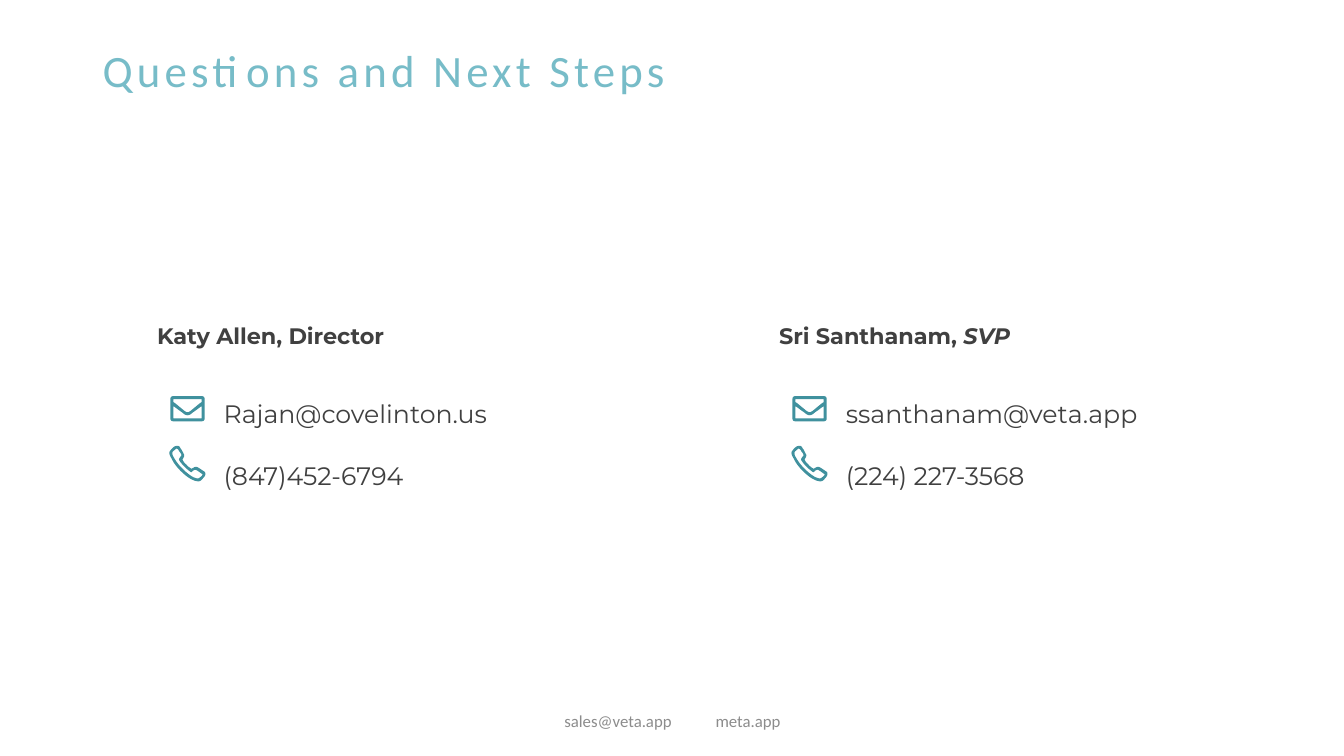
from dataclasses import dataclass

from pptx import Presentation
from pptx.dml.color import RGBColor as RGB
from pptx.enum.text import MSO_ANCHOR as Anchor, PP_ALIGN as Align
from pptx.util import Inches, Pt


@dataclass(frozen=True)
class Theme:
    heading: RGB = RGB(0x77, 0xBC, 0xC8)
    body: RGB = RGB(0x40, 0x40, 0x40)
    icon: RGB = RGB(0x40, 0x91, 0x9E)
    muted: RGB = RGB(0x8C, 0x8C, 0x8C)
    title_font: str = "Calibri"
    contact_font: str = "Montserrat"
    title_size: Pt = Pt(32)
    detail_size: Pt = Pt(18)
    name_size: Pt = Pt(16)
    footer_size: Pt = Pt(12)


THEME = Theme()

TITLE = {"name": THEME.title_font, "size": THEME.title_size}
NAME = {"name": THEME.contact_font, "size": THEME.name_size, "bold": True}
DETAIL = {"name": THEME.contact_font, "size": THEME.detail_size}
FOOTER = {"name": THEME.title_font, "size": THEME.footer_size}

# Contours hold hundredths of an inch: pairs are line ends, sixes are curves.
ENVELOPE = [
    [(31, 0), (3, 0), (1, 0, 0, 1, 0, 3), (0, 22), (0, 24, 1, 25, 3, 25),
     (31, 25), (33, 25, 34, 24, 34, 22), (34, 3), (34, 1, 33, 0, 31, 0)],
    [(31, 3), (31, 6), (29, 7, 27, 9, 22, 13), (21, 14, 18.5, 16, 17, 16),
     (15.5, 16, 13, 14, 12, 13), (7, 9, 5, 7, 3, 6), (3, 3)],
    [(3, 22), (3, 10), (5, 11, 7, 13, 10, 15), (12, 16, 14, 19, 17, 19),
     (20, 19, 22, 16, 24, 15), (27, 13, 29, 11, 31, 10), (31, 22)],
]
HANDSET = [
    [(35, 26), (34, 25.5, 29, 22, 28, 21.5), (27, 21, 25, 21, 24, 22),
     (23.5, 22, 22.5, 23, 22, 23), (20, 22, 18, 20.5, 17, 19),
     (15, 17.5, 14, 16, 13, 14), (13, 13.5, 14, 12.5, 14, 12),
     (15, 10.5, 15, 9, 14, 8), (14, 7.5, 13, 6, 12, 4),
     (11, 3, 10.5, 1.5, 10, 1), (9, 0, 7, 0, 5, 1),
     (4, 1.5, 2, 3.5, 1, 5), (0, 6, 0, 7, 0, 7.5),
     (0, 9, 1, 11, 2, 12.5), (3.5, 16, 6.5, 20.5, 11, 25),
     (15.5, 29.5, 19.5, 32.5, 23, 34), (25, 35, 27, 35.5, 29, 35.5),
     (31, 35.5, 32, 34, 33, 33), (33.5, 32, 34.5, 31.5, 35, 30.5),
     (36, 29, 36, 27, 35, 26)],
    [(29, 32.5), (27, 33, 26, 32, 24, 31.5), (21, 30, 17, 27, 13, 23),
     (9, 19, 6, 15, 4, 11), (3, 10, 3, 8, 3, 7), (3, 6, 5, 4.5, 7, 3),
     (8, 3, 9, 4, 10, 6), (11, 7, 12, 9, 12, 9.5),
     (12, 10, 11, 11, 10, 12.5), (9.5, 14), (10, 15, 11, 17, 15, 21),
     (19, 25, 21, 26, 21.5, 26.5), (22.5, 26), (23, 25, 25, 24, 26, 24),
     (27, 24, 32, 28, 33, 28.5), (33, 29.5, 31.5, 31, 29, 32.5)],
]


def add_text(slide, box, paragraphs, style, color, anchor=Anchor.TOP, **spacing):
    frame = slide.shapes.add_textbox(*map(Inches, box)).text_frame
    frame.word_wrap = True
    frame.vertical_anchor = anchor
    for index, runs in enumerate(paragraphs):
        paragraph = frame.paragraphs[0] if index == 0 else frame.add_paragraph()
        for key, value in spacing.items():
            setattr(paragraph, key, value)
        for wording, extra in runs:
            run = paragraph.add_run()
            run.text = wording
            for key, value in {**style, **extra}.items():
                setattr(run.font, key, value)
            run.font.color.rgb = color
    return frame


def flatten(contour, steps=5):
    points = [contour[0]]
    for segment in contour[1:]:
        if len(segment) == 2:
            points.append(segment)
            continue
        controls = [points[-1], segment[:2], segment[2:4], segment[4:]]
        for step in range(1, steps + 1):
            t = step / steps
            weights = ((1 - t) ** 3, 3 * t * (1 - t) ** 2, 3 * t * t * (1 - t), t ** 3)
            points.append(tuple(sum(w * c[axis] for w, c in zip(weights, controls))
                                for axis in (0, 1)))
    return [(Inches(x / 100), Inches(y / 100)) for x, y in points]


def add_icon(slide, left, top, contours):
    first, *holes = map(flatten, contours)
    outline = slide.shapes.build_freeform(*first[0])
    outline.add_line_segments(first[1:])
    for hole in holes:
        outline.move_to(*hole[0])
        outline.add_line_segments(hole[1:])
    icon = outline.convert_to_shape(Inches(left), Inches(top))
    icon.shadow.inherit = False
    icon.fill.solid()
    icon.fill.fore_color.rgb = THEME.icon
    icon.line.fill.background()


def add_contact(slide, left, name_runs, details):
    add_text(slide, (left, 3.15, 5.2, 0.36), [name_runs], NAME, THEME.body,
             space_after=Pt(12))
    add_text(slide, (left + 0.66, 3.75, 5.32, 1.38),
             [[(detail, {})] for detail in details], DETAIL, THEME.body,
             line_spacing=1.5, space_after=Pt(12))
    add_icon(slide, left + 0.22, 4.42, HANDSET)
    add_icon(slide, left + 0.23, 3.93, ENVELOPE)


def main():
    deck = Presentation()
    deck.slide_width, deck.slide_height = Inches(13.33), Inches(7.5)
    slide = deck.slides.add_slide(deck.slide_layouts[6])

    add_text(slide, (4.42, 6.95, 4.5, 0.4), [[("sales@veta.app \tmeta.app", {})]],
             FOOTER, THEME.muted, Anchor.MIDDLE, alignment=Align.CENTER)
    title = add_text(slide, (0.92, 0.37, 11.5, 0.71),
                     [[("Questions and Next Steps", {})]],
                     TITLE, THEME.heading, Anchor.MIDDLE, line_spacing=0.9)
    title.paragraphs[0].runs[0].font._element.set("spc", "300")

    add_contact(slide, 7.63, [("Sri Santhanam, ", {}), ("SVP", {"italic": True})],
                ["ssanthanam@veta.app", "(224) 227-3568"])
    add_contact(slide, 1.46, [("Katy Allen, Director", {})],
                ["Rajan@covelinton.us", "(847)452-6794"])

    deck.save("out.pptx")


if __name__ == "__main__":
    main()
